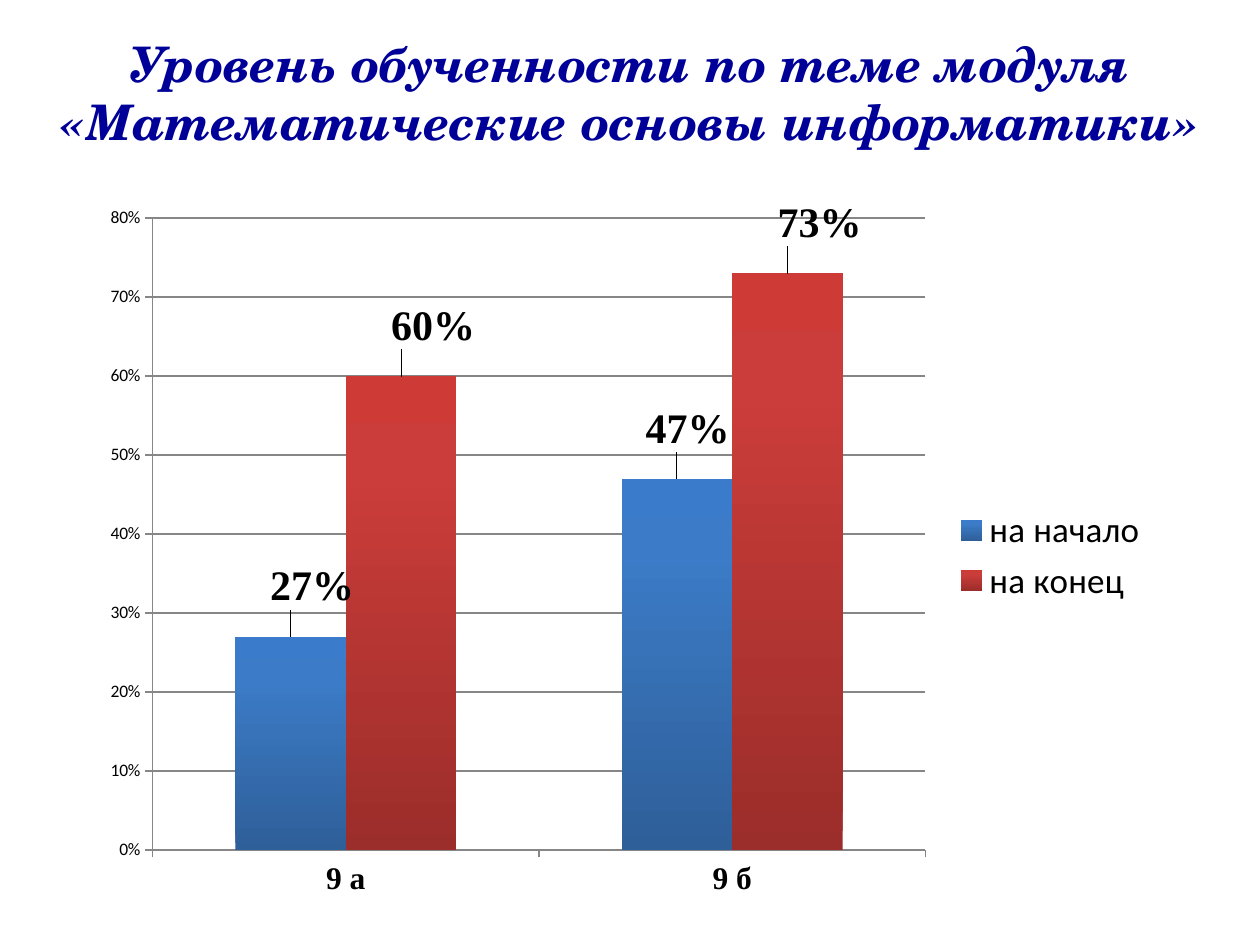
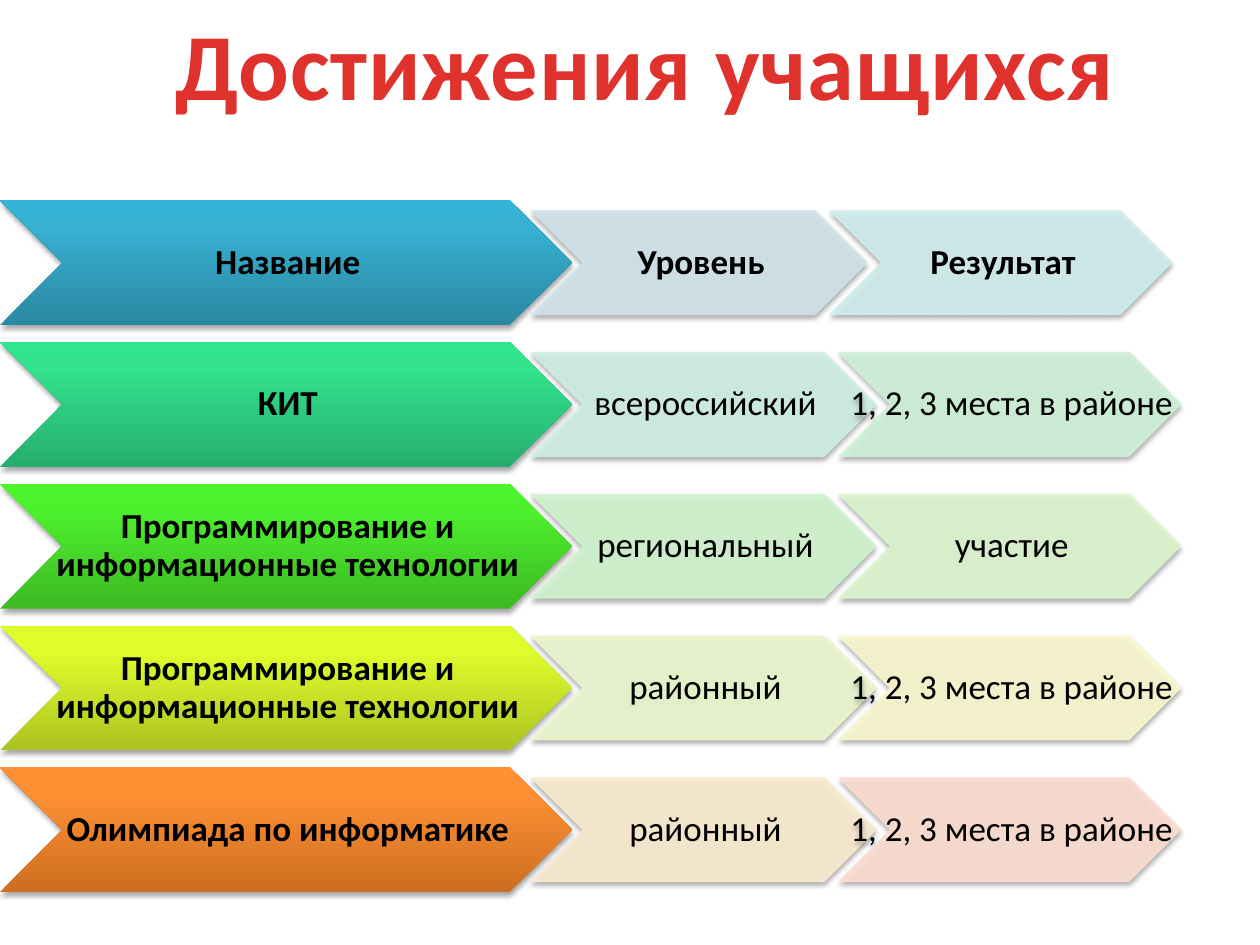
import pptx
import pptx.util
import pptx.dml.color
import pptx.chart.data
import pptx.enum.chart
import pptx.enum.shapes
import pptx.enum.text
import pptx.oxml
import pptx.oxml.ns
from lxml import etree

Inches = pptx.util.Inches
Pt = pptx.util.Pt

COLORS = {"navy": "000099", "black": "000000", "axis": "868686"}
FONTS = {"title": "TeX Gyre Schola", "main": "Calibri", "label": "Times New Roman"}

CHART_TITLE = ["Уровень обученности по теме модуля", "«Математические основы информатики»"]
CLASSES = ["9 а", "9 б"]
SERIES = [
    {"name": "на начало", "values": [0.27, 0.47],
     "stops": [(0, "2E5F99"), (80, "3C7BC7"), (100, "3A7CCB")],
     "label_shifts": [(0.02, -0.03), (0.01, -0.03)]},
    {"name": "на конец", "values": [0.6, 0.73],
     "stops": [(0, "9B2D2A"), (80, "CB3D3A"), (100, "CE3B37")],
     "label_shifts": [(0.03, -0.03), (0.03, -0.03)]},
]
PLOT_AREA = {"x": 0.06, "y": 0.03, "w": 0.72, "h": 0.88}

AWARDS_TITLE = ["Достижения учащихся"]
AWARDS_TITLE_STOPS = [(25, "E0322D"), (100, "A2201C")]
PROGRAMMING = "Программирование и\vинформационные технологии"
DISTRICT_PLACES = "1, 2, 3 места в районе"
AWARDS = [
    (("Название", "Уровень", "Результат"), ("2A88A2", "37B1D2", "34B4D6"), ("D0E3EA", "CFEDEC")),
    (("КИТ", "всероссийский", DISTRICT_PLACES), ("26AE6D", "32E28D", "2EE68E"), ("CFEFE3", "CFF1D9")),
    ((PROGRAMMING, "региональный", "участие"), ("3CB923", "4EF02E", "4CF52A"), ("D0F3CE", "DCF5CE")),
    ((PROGRAMMING, "районный", DISTRICT_PLACES), ("ACC321", "DFFD2B", "E1FF2B"), ("EBF7CE", "F9F8CF")),
    (("Олимпиада по информатике", "районный", DISTRICT_PLACES), ("CC6E20", "FF9034", "FF9136"),
     ("FAEBCF", "FCDDCF")),
]
ROWS_TOP, ROW_PITCH = 1.59, 1.125
NAME_SIZE, DETAIL_HEIGHT = (4.54, 0.99), 0.82
LEVEL_LEFT, LEVEL_WIDTH, HEADER_LEVEL_WIDTH = 4.22, 2.73, 2.66
RESULT_WIDTH, DETAIL_OVERLAP = 2.71, 0.29


def rgb(value):
    return pptx.dml.color.RGBColor.from_string(value)


def xml_part(text):
    return pptx.oxml.parse_xml(text.replace(">", " " + pptx.oxml.ns.nsdecls("a", "c") + ">", 1))


def gradient(stops, angle):
    marks = "".join(f'<a:gs pos="{place * 1000}"><a:srgbClr val="{color}"/></a:gs>'
                    for place, color in stops)
    return xml_part(f'<a:gradFill rotWithShape="1"><a:gsLst>{marks}</a:gsLst>'
                    f'<a:lin ang="{angle * 60000}" scaled="0"/></a:gradFill>')


def manual_layout(values, target=""):
    parts = target + "".join(f'<c:{mode}Mode val="edge"/>' for mode in "xy" if target)
    parts += "".join(f'<c:{key} val="{value}"/>' for key, value in values.items())
    return xml_part(f"<c:layout><c:manualLayout>{parts}</c:manualLayout></c:layout>")


def style(font, size, name="main", color="black", bold=False, italic=False):
    font.size, font.bold, font.italic = Pt(size), bold, italic
    font.name = FONTS[name]
    font.color.rgb = rgb(COLORS[color])


def add_titled_page(deck, lines, area, anchor, **look):
    page = deck.slides.add_slide(deck.slide_layouts[5])
    title = page.shapes.title
    title.left, title.top, title.width, title.height = map(Inches, area)
    frame = title.text_frame
    frame.text = "\n".join(lines)
    frame.vertical_anchor = anchor
    frame.auto_size = pptx.enum.text.MSO_AUTO_SIZE.NONE
    for para in frame.paragraphs:
        para.alignment = pptx.enum.text.PP_ALIGN.CENTER
        for span in para.runs:
            style(span.font, bold=True, **look)
    return page


def add_level_chart(page):
    kinds = pptx.enum.chart
    data = pptx.chart.data.CategoryChartData(number_format="0%")
    data.categories = CLASSES
    for entry in SERIES:
        data.add_series(entry["name"], entry["values"])
    chart = page.shapes.add_chart(kinds.XL_CHART_TYPE.COLUMN_CLUSTERED, Inches(0.7), Inches(1.56),
                                  Inches(8.52), Inches(5.7), data).chart
    style(chart.font, 10)
    chart.has_title = False
    chart.has_legend = True
    chart.legend.position = kinds.XL_LEGEND_POSITION.RIGHT
    chart.legend.include_in_layout = False
    style(chart.legend.font, 20)

    for axis in (chart.category_axis, chart.value_axis):
        axis.major_tick_mark = kinds.XL_TICK_MARK.OUTSIDE
        axis.minor_tick_mark = kinds.XL_TICK_MARK.NONE
        axis.format.line.color.rgb = rgb(COLORS["axis"])
    style(chart.category_axis.tick_labels.font, 18, "label", bold=True)
    scale = chart.value_axis
    scale.minimum_scale, scale.maximum_scale, scale.major_unit = 0, 0.8, 0.1
    scale.tick_labels.number_format = "0%"
    scale.tick_labels.number_format_is_linked = False
    scale.major_gridlines.format.line.color.rgb = rgb(COLORS["axis"])

    plot = chart.plots[0]
    plot.gap_width, plot.overlap, plot.vary_by_categories = 150, 0, False
    for series, entry in zip(plot.series, SERIES):
        series.invert_if_negative = False
        series._element.get_or_add_spPr().append(gradient(entry["stops"], 270))
        labels = series.data_labels
        labels.show_value = True
        labels.number_format = "0%"
        labels.number_format_is_linked = False
        labels.position = kinds.XL_LABEL_POSITION.OUTSIDE_END
        style(labels.font, 24, "label", bold=True)
        for index, (x, y) in enumerate(entry["label_shifts"]):
            label = series.points[index].data_label
            label.position = kinds.XL_LABEL_POSITION.OUTSIDE_END
            style(label.font, 24, "label", bold=True)
            mark = series._element.xpath(f"c:dLbls/c:dLbl/c:idx[@val='{index}']")[0]
            mark.addnext(manual_layout({"x": x, "y": y}))

    area = chart._chartSpace.xpath("c:chart/c:plotArea")[0]
    for layout in area.xpath("c:layout"):
        area.remove(layout)
    area.insert(0, manual_layout(PLOT_AREA, '<c:layoutTarget val="inner"/>'))


def add_chevron(page, area, text, colors, bold):
    chevron = page.shapes.add_shape(pptx.enum.shapes.MSO_SHAPE.CHEVRON, *map(Inches, area))
    properties = chevron._element.spPr
    if len(colors) > 1:
        properties.append(gradient(list(zip((0, 80, 100), colors)), 270))
        chevron.line.fill.background()
    else:
        chevron.fill.solid()
        chevron.fill.fore_color.rgb = rgb(colors[0])
        chevron.line.color.rgb = rgb(colors[0])
        chevron.line.width = Pt(0.75)
        for color in properties.xpath(".//a:srgbClr"):
            etree.SubElement(color, pptx.oxml.ns.qn("a:alpha"), val="90000")
    chevron.shadow.inherit = False
    properties.xpath("a:effectLst")[0].append(xml_part(
        f'<a:outerShdw blurRad="{Pt(3.1)}" dist="{Pt(1.8)}" dir="5400000" rotWithShape="0">'
        f'<a:srgbClr val="{COLORS["black"]}"><a:alpha val="35000"/></a:srgbClr></a:outerShdw>'))
    frame = chevron.text_frame
    frame.word_wrap = False
    frame.margin_left, frame.margin_right = Inches(0.03), 0
    frame.margin_top = frame.margin_bottom = Inches(0.01)
    frame.vertical_anchor = pptx.enum.text.MSO_ANCHOR.MIDDLE
    frame.text = text
    para = frame.paragraphs[0]
    para.alignment = pptx.enum.text.PP_ALIGN.CENTER
    para.line_spacing = 0.9
    for span in para.runs:
        style(span.font, 20, bold=bold)


def add_awards(page):
    name_width, name_height = NAME_SIZE
    for row, (texts, name_colors, detail_colors) in enumerate(AWARDS):
        header = row == 0
        top = ROWS_TOP + row * ROW_PITCH
        detail_top = top + (name_height - DETAIL_HEIGHT) / 2
        level_width = HEADER_LEVEL_WIDTH if header else LEVEL_WIDTH
        result_left = LEVEL_LEFT + level_width - DETAIL_OVERLAP
        add_chevron(page, (0, top, name_width, name_height), texts[0], name_colors, True)
        details = zip((LEVEL_LEFT, result_left), (level_width, RESULT_WIDTH), texts[1:], detail_colors)
        for left, width, text, color in details:
            add_chevron(page, (left, detail_top, width, DETAIL_HEIGHT), text, [color], header)


def main():
    deck = pptx.Presentation()
    deck.slide_width, deck.slide_height = Inches(10), Inches(7.5)
    anchors = pptx.enum.text.MSO_ANCHOR

    page = add_titled_page(deck, CHART_TITLE, (0, 0.21, 10, 1.04), anchors.MIDDLE,
                           size=28, name="title", color="navy", italic=True)
    add_level_chart(page)

    page = add_titled_page(deck, AWARDS_TITLE, (1.25, 0, 7.74, 1.01), anchors.TOP, size=54)
    run_properties = page.shapes.title.text_frame.paragraphs[0].runs[0]._r.get_or_add_rPr()
    run_properties.set("spc", "50")
    solid = run_properties.xpath("a:solidFill")[0]
    run_properties.replace(solid, gradient(AWARDS_TITLE_STOPS, 90))
    add_awards(page)

    deck.save("out.pptx")


if __name__ == "__main__":
    main()
